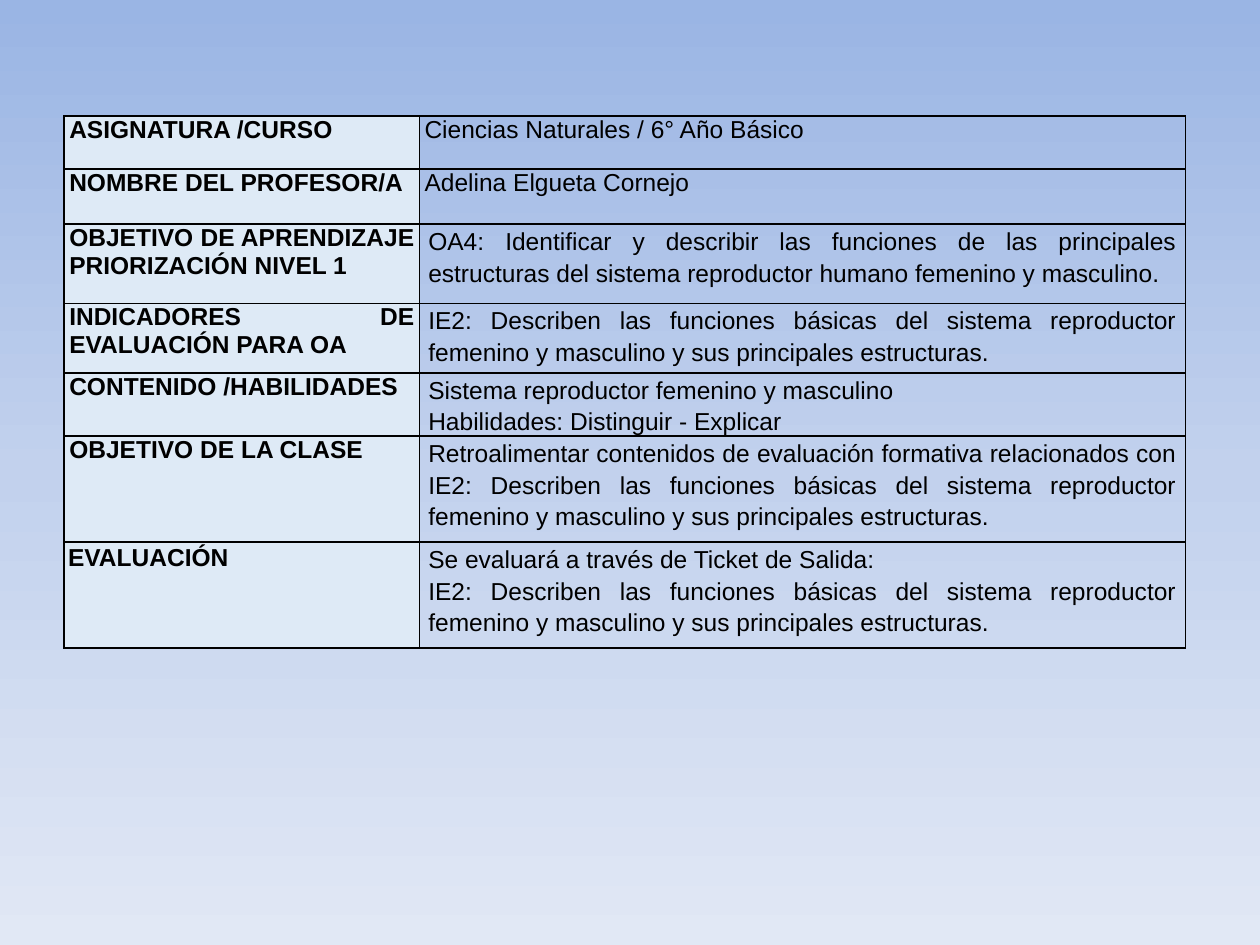
from copy import deepcopy

from lxml.etree import SubElement
from pptx import Presentation
from pptx.dml.color import RGBColor
from pptx.enum.text import PP_ALIGN
from pptx.oxml.ns import qn
from pptx.util import Inches, Pt

COLORS = {
    "text": "000000",
    "border": "000000",
    "label": "DEEAF6",
    "sky_top": "9AB5E4",
    "sky_middle": "C2D1ED",
    "sky_bottom": "E1E8F5",
}
INDICATOR = (
    "IE2: Describen las funciones básicas del sistema reproductor "
    "femenino y masculino y sus principales estructuras."
)
NARROW = (0.04, 0)
WIDE = (0.07, 0)
ROWS = [
    (0.42, "ASIGNATURA /CURSO", "Ciencias Naturales / 6° Año Básico", NARROW),
    (0.44, "NOMBRE DEL PROFESOR/A", "Adelina Elgueta Cornejo", NARROW),
    (0.63, "OBJETIVO DE APRENDIZAJE PRIORIZACIÓN NIVEL 1",
     "OA4: Identificar y describir las funciones de las principales "
     "estructuras del sistema reproductor humano femenino y masculino.", WIDE),
    (0.55, "INDICADORES DE EVALUACIÓN PARA OA", INDICATOR, WIDE),
    (0.34, "CONTENIDO /HABILIDADES",
     "Sistema reproductor femenino y masculino\nHabilidades: Distinguir - Explicar", WIDE),
    (0.84, "OBJETIVO DE LA CLASE",
     f"Retroalimentar contenidos de evaluación formativa relacionados con {INDICATOR}", WIDE),
    (0.84, "EVALUACIÓN", f"Se evaluará a través de Ticket de Salida:\n{INDICATOR}", WIDE),
]


class LessonSlide:
    font = "Arial"
    size = Pt(14)
    border_width = Pt(1)

    def __init__(self, presentation):
        self.slide = presentation.slides.add_slide(presentation.slide_layouts[6])

    def color(self, name):
        return RGBColor.from_string(COLORS[name])

    def background(self, *names):
        fill = self.slide.background.fill
        fill.gradient()
        fill.gradient_angle = 270
        stop_list = self.slide.element.find(".//" + qn("a:gsLst"))
        stop_list.append(deepcopy(stop_list[0]))
        for index, (stop, name) in enumerate(zip(fill.gradient_stops, names)):
            stop.color.rgb = self.color(name)
            stop.position = index / (len(names) - 1)

    def borders(self, cell):
        properties = cell._tc.get_or_add_tcPr()
        for index, side in enumerate(("lnL", "lnR", "lnT", "lnB")):
            line = properties.makeelement(qn(f"a:{side}"), {"w": str(self.border_width)})
            properties.insert(index, line)
            fill = SubElement(line, qn("a:solidFill"))
            SubElement(fill, qn("a:srgbClr"), val=COLORS["border"])

    def cell(self, cell, text, margins, bold=False, spacing=None, fill=None):
        horizontal, vertical = map(Inches, margins)
        cell.margin_left = cell.margin_right = horizontal
        cell.margin_top = cell.margin_bottom = vertical
        if fill:
            cell.fill.solid()
            cell.fill.fore_color.rgb = self.color(fill)
        else:
            cell.fill.background()
        self.borders(cell)
        cell.text_frame.text = text
        for paragraph in cell.text_frame.paragraphs:
            paragraph.alignment = PP_ALIGN.JUSTIFY
            paragraph.line_spacing = spacing
            for run in paragraph.runs:
                run.font.name = self.font
                run.font.size = self.size
                run.font.bold = bold
                run.font.color.rgb = self.color("text")

    def table(self, left, top, widths, rows):
        height = sum(row[0] for row in rows)
        frame = self.slide.shapes.add_table(
            len(rows), len(widths), Inches(left), Inches(top),
            Inches(sum(widths)), Inches(height))
        table = frame.table
        table.first_row = table.horz_banding = False
        for column, width in zip(table.columns, widths):
            column.width = Inches(width)
        for index, (height, label, text, margins) in enumerate(rows):
            table.rows[index].height = Inches(height)
            label_margins = (0.03, 0.02) if label == "EVALUACIÓN" else NARROW
            self.cell(table.cell(index, 0), label, label_margins, bold=True, fill="label")
            self.cell(table.cell(index, 1), text, margins,
                      spacing=1.15 if margins == WIDE else None)


def main():
    presentation = Presentation()
    presentation.slide_width = Inches(10)
    presentation.slide_height = Inches(7.5)
    lesson = LessonSlide(presentation)
    lesson.background("sky_top", "sky_middle", "sky_bottom")
    lesson.table(0.51, 0.92, (2.82, 6.08), ROWS)
    presentation.save("out.pptx")


if __name__ == "__main__":
    main()
